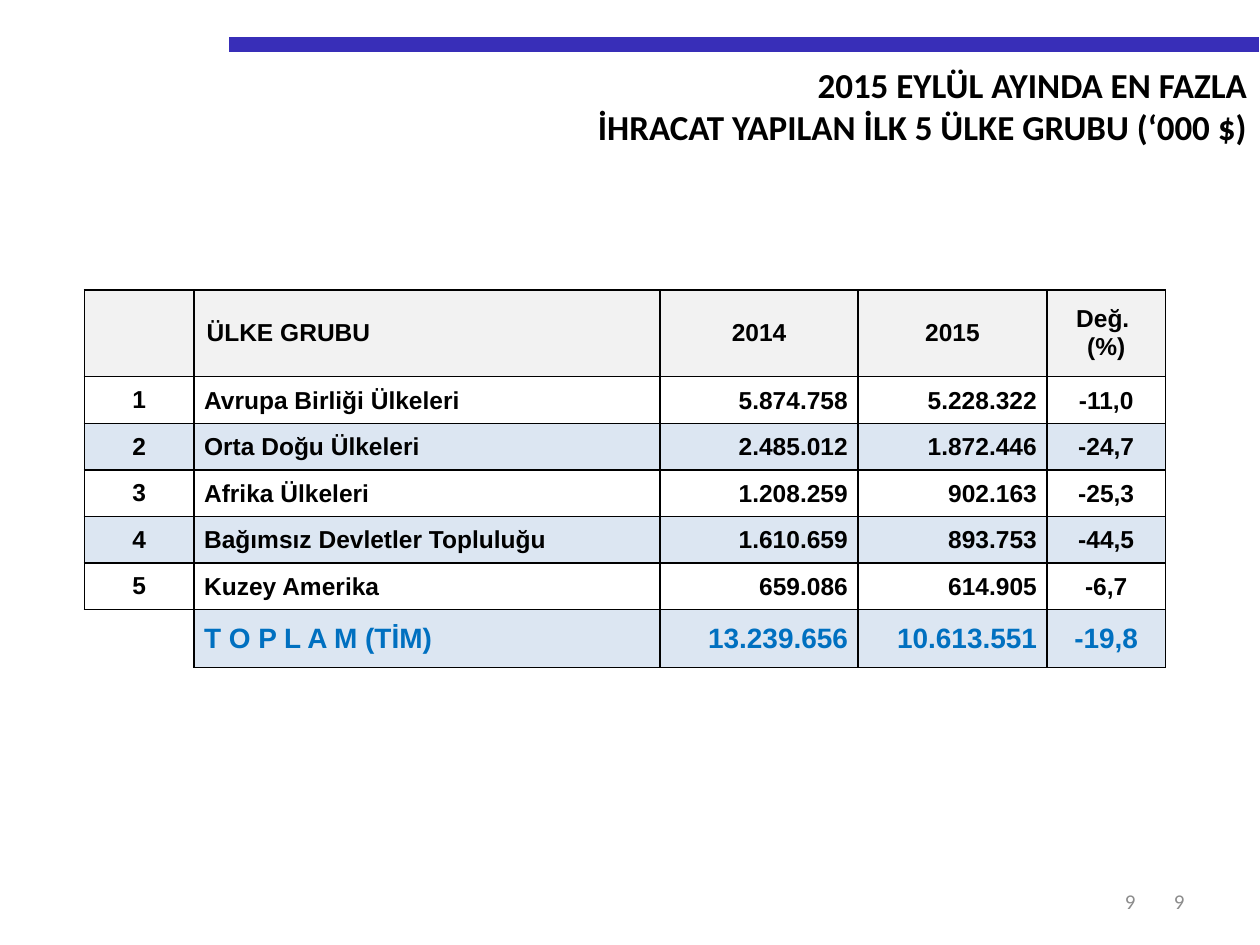
from lxml import etree
from pptx import Presentation
from pptx.dml.color import RGBColor
from pptx.enum import shapes, text
from pptx.oxml.ns import qn
from pptx.util import Inches, Pt

BLACK = RGBColor(0, 0, 0)
GREY = RGBColor(0x8C, 0x8C, 0x8C)
BLUE = RGBColor(0x00, 0x70, 0xC0)
INDIGO = RGBColor(0x38, 0x2E, 0xB8)
PALE = RGBColor(0xDC, 0xE6, 0xF2)
SILVER = RGBColor(0xF2, 0xF2, 0xF2)

LEFT, MID, RIGHT = text.PP_ALIGN.LEFT, text.PP_ALIGN.CENTER, text.PP_ALIGN.RIGHT
TITLE = "2015 EYLÜL AYINDA EN FAZLA\nİHRACAT YAPILAN İLK 5 ÜLKE GRUBU (‘000 $)"
COLS = [0.87, 3.7, 1.57, 1.5, 0.94]
HEIGHTS = [0.69] + [0.37] * 5 + [0.46]
ALIGNS = [MID, LEFT, RIGHT, RIGHT, MID]
ROWS = [
    ["", "ÜLKE GRUBU", "2014", "2015", "Değ. \n(%)"],
    ["1", "Avrupa Birliği Ülkeleri", "5.874.758", "5.228.322", "-11,0"],
    ["2", "Orta Doğu Ülkeleri", "2.485.012", "1.872.446", "-24,7"],
    ["3", "Afrika Ülkeleri", "1.208.259", "902.163", "-25,3"],
    ["4", "Bağımsız Devletler Topluluğu", "1.610.659", "893.753", "-44,5"],
    ["5", "Kuzey Amerika", "659.086", "614.905", "-6,7"],
    ["", "T O P L A M (TİM)", "13.239.656", "10.613.551", "-19,8"],
]


def style(frame, align, font, size, color, bold=False):
    for para in frame.paragraphs:
        para.alignment = align
        for run in para.runs:
            run.font.name, run.font.size = font, Pt(size)
            run.font.bold, run.font.color.rgb = bold, color


def add_rule(slide, left, top, width):
    rule = slide.shapes.add_connector(
        shapes.MSO_CONNECTOR.STRAIGHT, left, top, left + width, top)
    rule.line.color.rgb, rule.line.width = INDIGO, Pt(8.5)
    etree.SubElement(rule._element.spPr, qn("a:effectLst"))


def add_title(slide, left, top, width, height):
    title = slide.shapes.title
    title.left, title.top, title.width, title.height = left, top, width, height
    frame = title.text_frame
    frame.text = TITLE
    frame.vertical_anchor = text.MSO_ANCHOR.TOP
    frame.auto_size = text.MSO_AUTO_SIZE.NONE
    style(frame, RIGHT, "Calibri", 20, BLACK, True)


def add_number(slide, left, top, width, height):
    frame = slide.shapes.add_textbox(left, top, width, height).text_frame
    frame.word_wrap = True
    frame.vertical_anchor = text.MSO_ANCHOR.MIDDLE
    frame.text = "9"
    style(frame, RIGHT, "Calibri", 12, GREY)


def add_borders(cell, sides):
    """Draw thin black lines on the sides named, none on the others."""
    props = cell._tc.get_or_add_tcPr()
    for spot, side in enumerate("LRTB"):
        line = etree.Element(qn("a:ln" + side), w=str(Pt(1)))
        if side in sides:
            fill = etree.SubElement(line, qn("a:solidFill"))
            etree.SubElement(fill, qn("a:srgbClr"), val=str(BLACK))
        else:
            etree.SubElement(line, qn("a:noFill"))
        props.insert(spot, line)


def fill_cell(cell, words, row, col):
    head, total = row == 0, row == len(ROWS) - 1
    align = ALIGNS[col]
    cell.text = words
    cell.vertical_anchor = text.MSO_ANCHOR.MIDDLE
    if not head and col:
        cell.margin_left = Inches(0.08 if align == LEFT else 0.01)
        cell.margin_right = Inches(0.08 if align == RIGHT else 0.01)
        cell.margin_top, cell.margin_bottom = Inches(0.01), 0
    if head and align == RIGHT:
        align = MID
    style(cell.text_frame, align, "Arial", 16 if total else 14,
          BLUE if total else BLACK, True)
    blank = total and col == 0
    if blank or row % 2:
        cell.fill.background()
    else:
        cell.fill.solid()
        cell.fill.fore_color.rgb = SILVER if head else PALE
    add_borders(cell, "TR" if blank else "LRTB")


def add_grid(slide, left, top, width, height):
    table = slide.shapes.add_table(
        len(ROWS), len(COLS), left, top, width, height).table
    table.first_row = table.horz_banding = False
    for col, size in zip(table.columns, COLS):
        col.width = Inches(size)
    for row, size in zip(table.rows, HEIGHTS):
        row.height = Inches(size)
    for i, row in enumerate(ROWS):
        for j, words in enumerate(row):
            fill_cell(table.cell(i, j), words, i, j)


def main():
    deck = Presentation()
    deck.slide_width, deck.slide_height = Inches(10), Inches(7.5)
    slide = deck.slides.add_slide(deck.slide_layouts[5])
    add_number(slide, Inches(7.17), Inches(6.95), Inches(2.33), Inches(0.4))
    add_rule(slide, Inches(1.82), Inches(0.35), Inches(8.17))
    add_number(slide, Inches(7.01), Inches(6.95), Inches(2.1), Inches(0.4))
    add_title(slide, Inches(1.06), Inches(0.45), Inches(8.94), Inches(0.77))
    add_grid(slide, Inches(0.67), Inches(2.3),
             Inches(sum(COLS)), Inches(sum(HEIGHTS)))
    deck.save("out.pptx")


if __name__ == "__main__":
    main()
